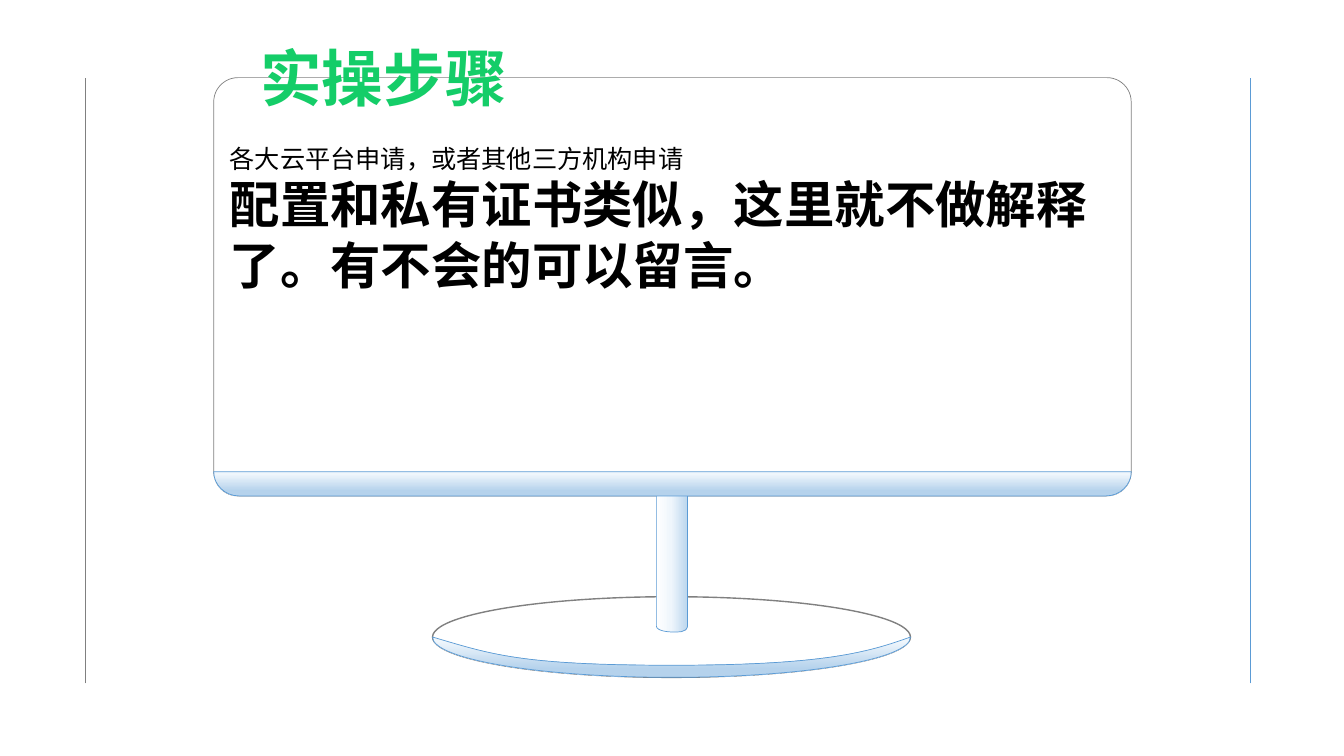
from copy import deepcopy

from lxml.etree import SubElement
from pptx import Presentation
from pptx.dml.color import RGBColor
from pptx.enum.shapes import MSO_CONNECTOR, MSO_SHAPE
from pptx.enum.text import MSO_AUTO_SIZE, PP_ALIGN
from pptx.oxml.ns import qn
from pptx.util import Pt

SCALE = 9144
FONT = "Arial"
GREY, BLUE, WHITE, BLACK = "808080", "5B9BD5", "FFFFFF", "000000"
TITLE_STOPS = [(0, "14CD68"), (100, "0B6E38")]
STAND_STOPS = [(0, WHITE), (47, "EFF6FC"), (99, "BDD7EE")]
EDGE_STOPS = [(10, "EFF6FC"), (79, "B5D2EC")]
RIGHTWARD, DOWNWARD = 0, 270


def px(length):
    """Turn px into EMU."""
    return length * SCALE


def color(value):
    """Turn a hex string into a colour."""
    return RGBColor.from_string(value)


def set_gradient(fill, properties, stops, angle):
    """Give a fill a linear gradient with any number of stops."""
    fill.gradient()
    fill.gradient_angle = angle
    stop_list = properties.find(qn("a:gradFill")).find(qn("a:gsLst"))
    for _ in stops[2:]:
        stop_list.append(deepcopy(stop_list[0]))
    for stop, (percent, value) in zip(fill.gradient_stops, stops):
        stop.position = percent / 100
        stop.color.rgb = color(value)


def set_line(shape, value, width):
    """Set the outline colour and width in points."""
    shape.line.color.rgb = color(value)
    shape.line.width = Pt(width)


def add_preset(shapes, preset, box, width, fill=None):
    """Add a grey-outlined preset shape."""
    shape = shapes.add_shape(preset, *map(px, box))
    shape.shadow.inherit = False
    if fill:
        shape.fill.solid()
        shape.fill.fore_color.rgb = color(fill)
    else:
        shape.fill.background()
    set_line(shape, GREY, width)
    return shape


def bend_segments(shape, segments):
    """Join the straight steps of each three-point segment into one cubic curve."""
    outline = next(shape._element.iter(qn("a:path")))
    steps = iter(outline.findall(qn("a:lnTo")))
    for segment in segments:
        parts = [next(steps) for _ in segment]
        if len(parts) == 3:
            curve = SubElement(outline, qn("a:cubicBezTo"))
            parts[0].addprevious(curve)
            for part in parts:
                curve.append(part[0])
                outline.remove(part)


def add_outline(shapes, left, top, start, segments, stops, angle):
    """Add a closed outline of straight (one point) and curved (three point) segments."""
    builder = shapes.build_freeform(left + start[0], top + start[1], scale=SCALE)
    builder.add_line_segments([(left + x, top + y) for segment in segments
                               for x, y in segment], close=True)
    shape = builder.convert_to_shape()
    bend_segments(shape, segments)
    shape.shadow.inherit = False
    set_gradient(shape.fill, shape._element.spPr, stops, angle)
    set_line(shape, BLUE, 0.5)


def add_monitor(slide, left, top, width, height):
    """Draw the monitor: foot, screen, stand, lower edge and foot rim."""
    shapes = slide.shapes.add_group_shape().shapes
    foot_left, foot_top = left + 217, top + height + 100
    add_preset(shapes, MSO_SHAPE.OVAL, (foot_left, foot_top, 474, 80), 1)
    screen = add_preset(shapes, MSO_SHAPE.ROUNDED_RECTANGLE,
                        (left, top, width, height), 0.5, WHITE)
    screen.adjustments[0] = 0.058
    add_outline(shapes, left + 439, top + 403, (23, 0), [
        [(27, 0), (31, 4), (31, 8)], [(31, 141)],
        [(30, 148), (21, 147), (16, 147)], [(12, 147), (0, 146), (0, 141)],
        [(0, 8)], [(0, 4), (4, 0), (9, 0)],
    ], STAND_STOPS, RIGHTWARD)
    add_outline(shapes, left, top + height - 24, (width, 0), [
        [(width, 13), (width - 11, 24), (width - 25, 24)], [(25, 24)],
        [(11, 24), (0, 13), (0, 0)],
    ], EDGE_STOPS, DOWNWARD)
    add_outline(shapes, foot_left, foot_top + 40, (0, 0), [
        [(58, 17), (86, 28), (238, 28)], [(389, 28), (432, 15), (474, 0)],
        [(474, 22), (369, 40), (238, 40)], [(107, 40), (0, 22), (0, 0)],
    ], EDGE_STOPS, DOWNWARD)


def add_side_lines(slide, left, top, width, height):
    """Draw the vertical lines at both sides of the box."""
    for x, value in ((left, GREY), (left + width, BLUE)):
        line = slide.shapes.add_connector(
            MSO_CONNECTOR.STRAIGHT, px(x), px(top + height), px(x), px(top))
        set_line(line, value, 0.5)
        SubElement(line._element.spPr, qn("a:effectLst"))


def add_run(paragraph, text, size, bold=False):
    """Add one run of text and return it."""
    run = paragraph.add_run()
    run.text = text
    run.font.name = FONT
    run.font.size = Pt(size)
    run.font.bold = bold
    run.font.color.rgb = color(BLACK)
    return run


def add_title(slide, *box):
    """Place the green title."""
    frame = slide.shapes.add_textbox(*map(px, box)).text_frame
    frame.word_wrap = False
    frame.auto_size = MSO_AUTO_SIZE.SHAPE_TO_FIT_TEXT
    paragraph = frame.paragraphs[0]
    paragraph.alignment = PP_ALIGN.CENTER
    run = add_run(paragraph, "实操步骤", 44, True)
    set_gradient(run.font.fill, run._r.rPr, TITLE_STOPS, RIGHTWARD)


def add_body(slide, *box):
    """Place the text on the screen."""
    frame = slide.shapes.add_textbox(*map(px, box)).text_frame
    frame.word_wrap = True
    frame.auto_size = MSO_AUTO_SIZE.SHAPE_TO_FIT_TEXT
    add_run(frame.paragraphs[0], "各大云平台申请，或者其他三方机构申请", 18)
    add_run(frame.add_paragraph(),
            "配置和私有证书类似，这里就不做解释了。有不会的可以留言。", 36, True)


def main():
    """Build the slide and save it."""
    presentation = Presentation()
    presentation.slide_width, presentation.slide_height = px(1333), px(750)
    slide = presentation.slides.add_slide(presentation.slide_layouts[6])
    add_monitor(slide, 212, 77, 910, 415)
    add_side_lines(slide, 85, 77, 1155, 601)
    add_title(slide, 247, 35, 267, 84)
    add_body(slide, 218, 137, 910, 162)
    presentation.save("out.pptx")


if __name__ == "__main__":
    main()
